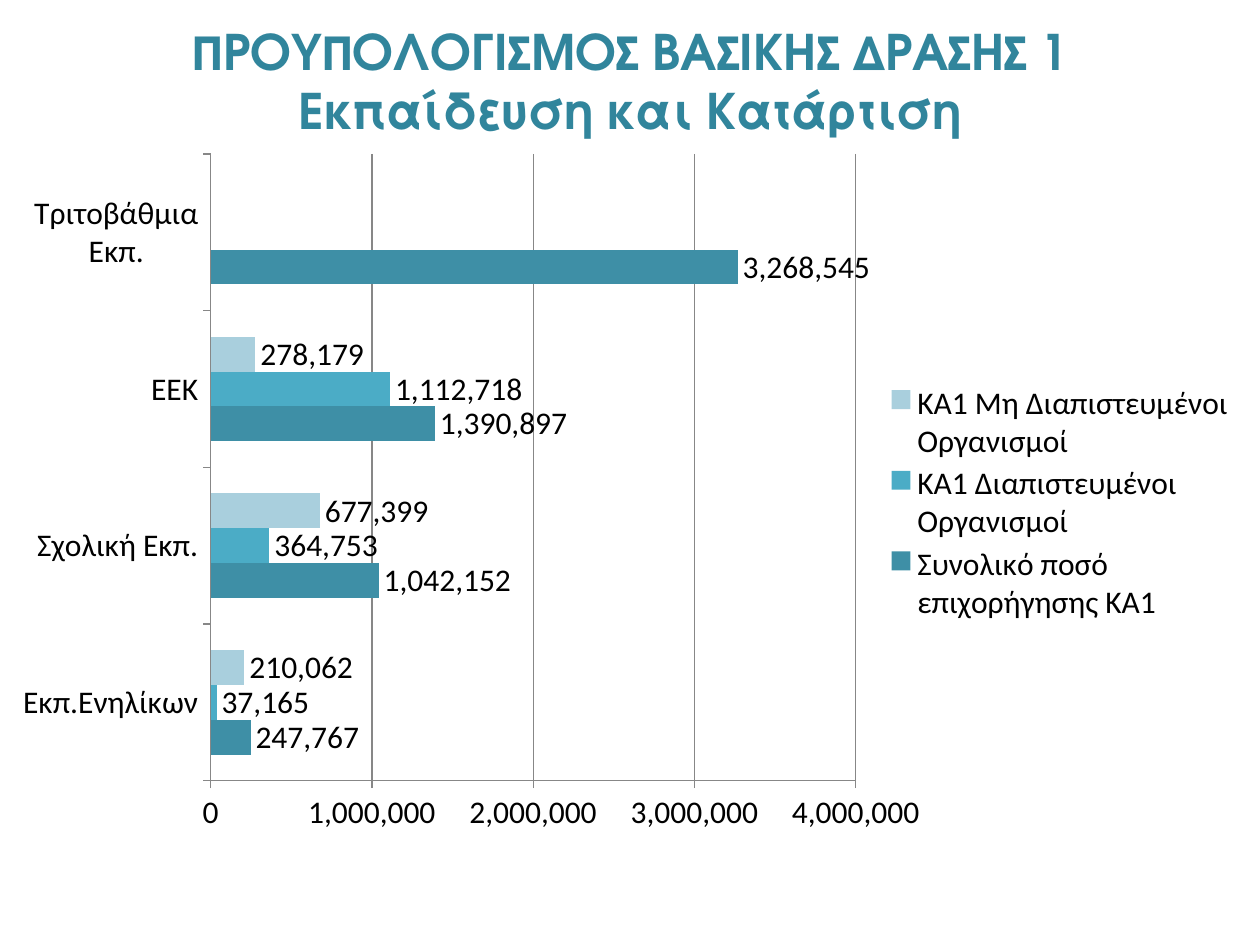
from lxml import etree
from pptx import Presentation
from pptx import util as u
from pptx.chart import data as cd
from pptx.dml.color import RGBColor
from pptx.enum import chart as ch, text as tx
from pptx.oxml import ns

HUES = {"title": "31859C", "text": "000000", "grid": "878787",
        "total": "3E8FA6", "member": "4BACC6", "other": "A9CFDD"}
CATS = ["Εκπ.Ενηλίκων", "Σχολική Εκπ.", "ΕΕΚ", "Τριτοβάθμια Εκπ."]
ROWS = [
    ("Συνολικό ποσό επιχορήγησης ΚΑ1", "total",
     [247767, 1042152, 1390897, 3268545]),
    ("ΚΑ1 Διαπιστευμένοι Οργανισμοί", "member",
     [37165, 364753, 1112718, None]),
    ("ΚΑ1 Μη Διαπιστευμένοι Οργανισμοί", "other",
     [210062, 677399, 278179, None]),
]
FORM = "#,##0"


def hue(name):
    return RGBColor.from_string(HUES[name])


def style(font, size=18, face="Calibri", color="text", bold=False):
    font.size = u.Pt(size)
    font.name = face
    font.bold = bold
    font.color.rgb = hue(color)


def write(frame, lines, align=tx.PP_ALIGN.CENTER, **form):
    for n, line in enumerate(lines):
        para = frame.add_paragraph() if n else frame.paragraphs[0]
        para.alignment = align
        run = para.add_run()
        run.text = line
        style(run.font, **form)


def place(part, x, y, w, h, inner=False):
    node = part.find(ns.qn("c:layout"))
    if node is None:
        node = etree.Element(ns.qn("c:layout"))
        spot = 1 if part.tag == ns.qn("c:legend") else 0
        part.insert(spot, node)
    for kid in list(node):
        node.remove(kid)
    man = etree.SubElement(node, ns.qn("c:manualLayout"))
    pairs = [("layoutTarget", "inner")] if inner else []
    pairs += [("xMode", "edge"), ("yMode", "edge"),
              ("x", x), ("y", y), ("w", w), ("h", h)]
    for tag, val in pairs:
        etree.SubElement(man, ns.qn("c:" + tag)).set("val", str(val))


def head(slide, x, y, w, h):
    title = slide.shapes.title
    title.left, title.top, title.width, title.height = map(u.Cm, (x, y, w, h))
    frame = title.text_frame
    frame.word_wrap = True
    frame.auto_size = tx.MSO_AUTO_SIZE.NONE
    frame.vertical_anchor = tx.MSO_ANCHOR.TOP
    write(frame, ["ΠΡΟΥΠΟΛΟΓΙΣΜΟΣ ΒΑΣΙΚΗΣ ΔΡΑΣΗΣ 1", "Εκπαίδευση και Κατάρτιση"],
          size=28, face="TeX Gyre Adventor", color="title", bold=True)


def bars(slide, x, y, w, h):
    data = cd.CategoryChartData(number_format=FORM)
    data.categories = CATS
    for name, _, vals in ROWS:
        data.add_series(name, vals)
    chart = slide.shapes.add_chart(
        ch.XL_CHART_TYPE.BAR_CLUSTERED, *map(u.Cm, (x, y, w, h)), data).chart
    chart.has_title = False
    style(chart.font)

    plot = chart.plots[0]
    plot.gap_width = 150
    plot.overlap = 0
    plot.vary_by_categories = False
    for series, (_, color, _) in zip(plot.series, ROWS):
        series.format.fill.solid()
        series.format.fill.fore_color.rgb = hue(color)
        series.invert_if_negative = False
        labels = series.data_labels
        labels.show_value = True
        labels.number_format = FORM
        labels.number_format_is_linked = False
        labels.position = ch.XL_LABEL_POSITION.OUTSIDE_END
        style(labels.font)

    for axis in (chart.category_axis, chart.value_axis):
        axis.major_tick_mark = ch.XL_TICK_MARK.OUTSIDE
        axis.minor_tick_mark = ch.XL_TICK_MARK.NONE
        axis.format.line.color.rgb = hue("grid")
        style(axis.tick_labels.font)
    scale = chart.value_axis
    scale.minimum_scale, scale.maximum_scale = 0, 4000000
    scale.major_unit = 1000000
    scale.tick_labels.number_format = FORM
    scale.tick_labels.number_format_is_linked = False
    scale.has_major_gridlines = True
    scale.major_gridlines.format.line.color.rgb = hue("grid")

    chart.has_legend = True
    key = chart.legend
    key.position = ch.XL_LEGEND_POSITION.RIGHT
    key.include_in_layout = False
    style(key.font)
    area = chart.element.find(".//" + ns.qn("c:plotArea"))
    place(area, 0.16, 0.02, 0.49, 0.89, inner=True)
    place(chart.element.find(".//" + ns.qn("c:legend")), 0.67, 0.34, 0.27, 0.35)


def main():
    deck = Presentation()
    deck.slide_width, deck.slide_height = u.Cm(25.4), u.Cm(19.05)
    slide = deck.slides.add_slide(deck.slide_layouts[5])
    head(slide, 0.36, 0.3, 24.69, 2.21)
    bars(slide, 0, 2.82, 26.54, 14.2)
    deck.save("out.pptx")


if __name__ == "__main__":
    main()
